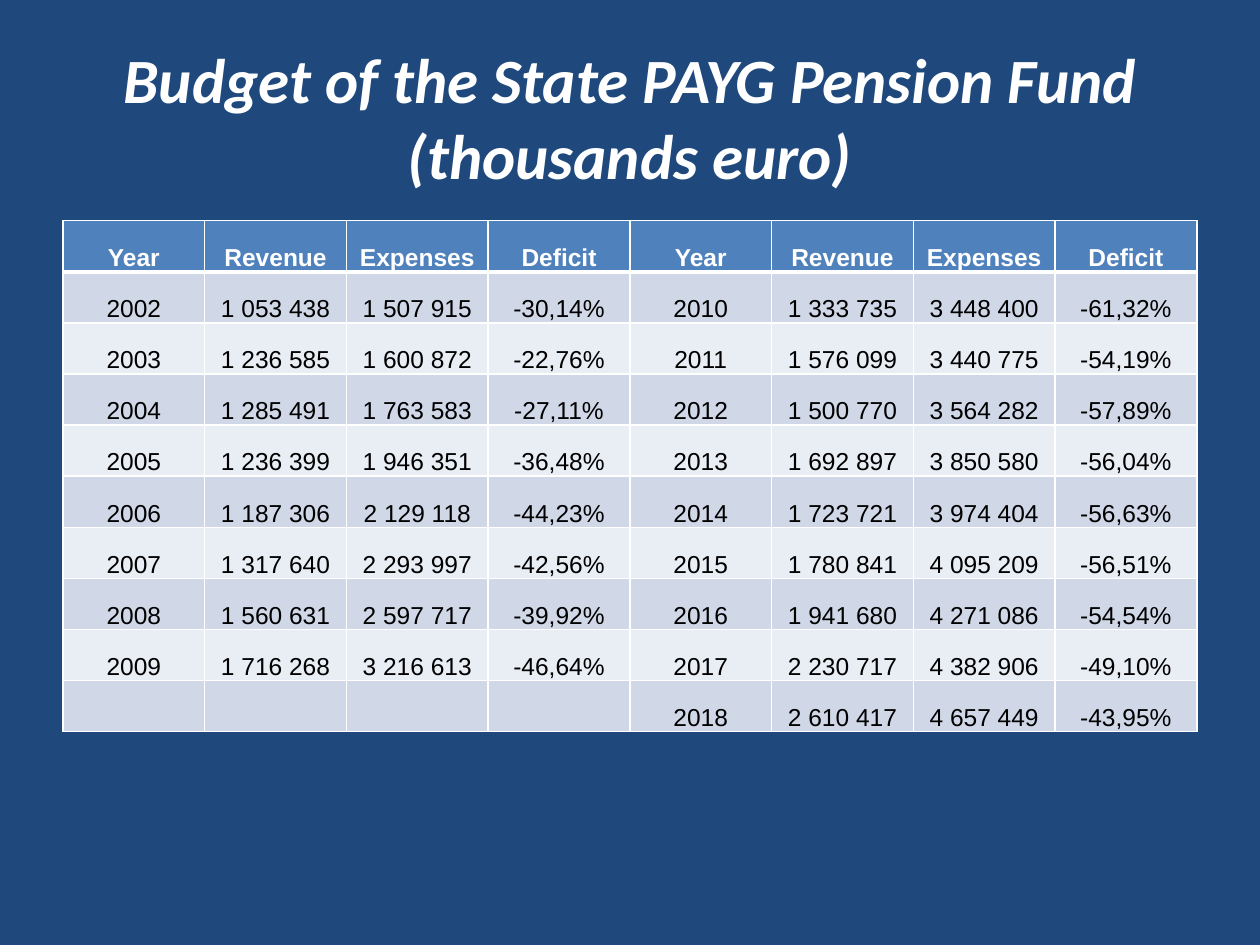
from lxml import etree
from pptx import Presentation
from pptx import util as u
from pptx.dml.color import RGBColor
from pptx.enum import text
from pptx.oxml.ns import qn

NAVY, BLUE, WHITE, BLACK = "1F497D", "4F81BD", "FFFFFF", "000000"
BANDS = ("D0D8E8", "E9EDF4")
HEADINGS = ("Year", "Revenue", "Expenses", "Deficit")
BUDGET = [
    ("2002", "1 053 438", "1 507 915", "-30,14%"),
    ("2003", "1 236 585", "1 600 872", "-22,76%"),
    ("2004", "1 285 491", "1 763 583", "-27,11%"),
    ("2005", "1 236 399", "1 946 351", "-36,48%"),
    ("2006", "1 187 306", "2 129 118", "-44,23%"),
    ("2007", "1 317 640", "2 293 997", "-42,56%"),
    ("2008", "1 560 631", "2 597 717", "-39,92%"),
    ("2009", "1 716 268", "3 216 613", "-46,64%"),
    ("2010", "1 333 735", "3 448 400", "-61,32%"),
    ("2011", "1 576 099", "3 440 775", "-54,19%"),
    ("2012", "1 500 770", "3 564 282", "-57,89%"),
    ("2013", "1 692 897", "3 850 580", "-56,04%"),
    ("2014", "1 723 721", "3 974 404", "-56,63%"),
    ("2015", "1 780 841", "4 095 209", "-56,51%"),
    ("2016", "1 941 680", "4 271 086", "-54,54%"),
    ("2017", "2 230 717", "4 382 906", "-49,10%"),
    ("2018", "2 610 417", "4 657 449", "-43,95%"),
]
FIRST_HALF = 8


def paint(color_format, color):
    color_format.rgb = RGBColor.from_string(color)


def fill(target, color):
    target.fill.solid()
    paint(target.fill.fore_color, color)


def style(paragraph, face, size, color, bold=False, italic=False):
    paragraph.alignment = text.PP_ALIGN.CENTER
    font = paragraph.font
    font.name, font.size = face, u.Pt(size)
    font.bold, font.italic = bold, italic
    paint(font.color, color)


def add_title(slide, wording):
    title = slide.shapes.add_textbox(u.Cm(1.27), u.Cm(0.76), u.Cm(22.86), u.Cm(3.18))
    frame = title.text_frame
    frame.word_wrap = True
    frame.vertical_anchor = text.MSO_ANCHOR.MIDDLE
    frame.text = wording
    style(frame.paragraphs[0], "Calibri", 36, WHITE, bold=True, italic=True)


def add_borders(cell, top, bottom):
    properties = cell._tc.get_or_add_tcPr()
    widths = {"a:lnL": 1, "a:lnR": 1, "a:lnT": top, "a:lnB": bottom}
    for position, (side, width) in enumerate(widths.items()):
        line = etree.Element(qn(side), w=str(u.Pt(width)))
        solid = etree.SubElement(line, qn("a:solidFill"))
        etree.SubElement(solid, qn("a:srgbClr"), val=WHITE)
        properties.insert(position, line)


def fill_cell(cell, wording, row):
    is_heading = row == 0
    cell.margin_left = cell.margin_right = u.Cm(0.18)
    cell.margin_top = cell.margin_bottom = 0
    cell.vertical_anchor = text.MSO_ANCHOR.BOTTOM
    cell.text = wording
    paragraph = cell.text_frame.paragraphs[0]
    paragraph.line_spacing = 1.15
    style(paragraph, "Arial", 14, WHITE if is_heading else BLACK, bold=is_heading)
    fill(cell, BLUE if is_heading else BANDS[(row - 1) % 2])
    add_borders(cell, top=3 if row == 1 else 1, bottom=3 if is_heading else 1)


def add_budget_table(slide):
    blank_year = ("",) * len(HEADINGS)
    early = BUDGET[:FIRST_HALF] + [blank_year]
    late = BUDGET[FIRST_HALF:]
    rows = [HEADINGS * 2] + [left + right for left, right in zip(early, late)]
    table = slide.shapes.add_table(
        len(rows), len(rows[0]), u.Cm(1.27), u.Cm(4.45), u.Cm(22.86), u.Cm(10.3)
    ).table
    for table_row in table.rows:
        table_row.height = u.Cm(1.03)
    for row, values in enumerate(rows):
        for column, value in enumerate(values):
            fill_cell(table.cell(row, column), value, row)


def main():
    deck = Presentation()
    deck.slide_width, deck.slide_height = u.Cm(25.4), u.Cm(19.05)
    slide = deck.slides.add_slide(deck.slide_layouts[6])
    fill(slide.background, NAVY)
    add_title(slide, "Budget of the State PAYG Pension Fund (thousands euro)")
    add_budget_table(slide)
    deck.save("out.pptx")


if __name__ == "__main__":
    main()
